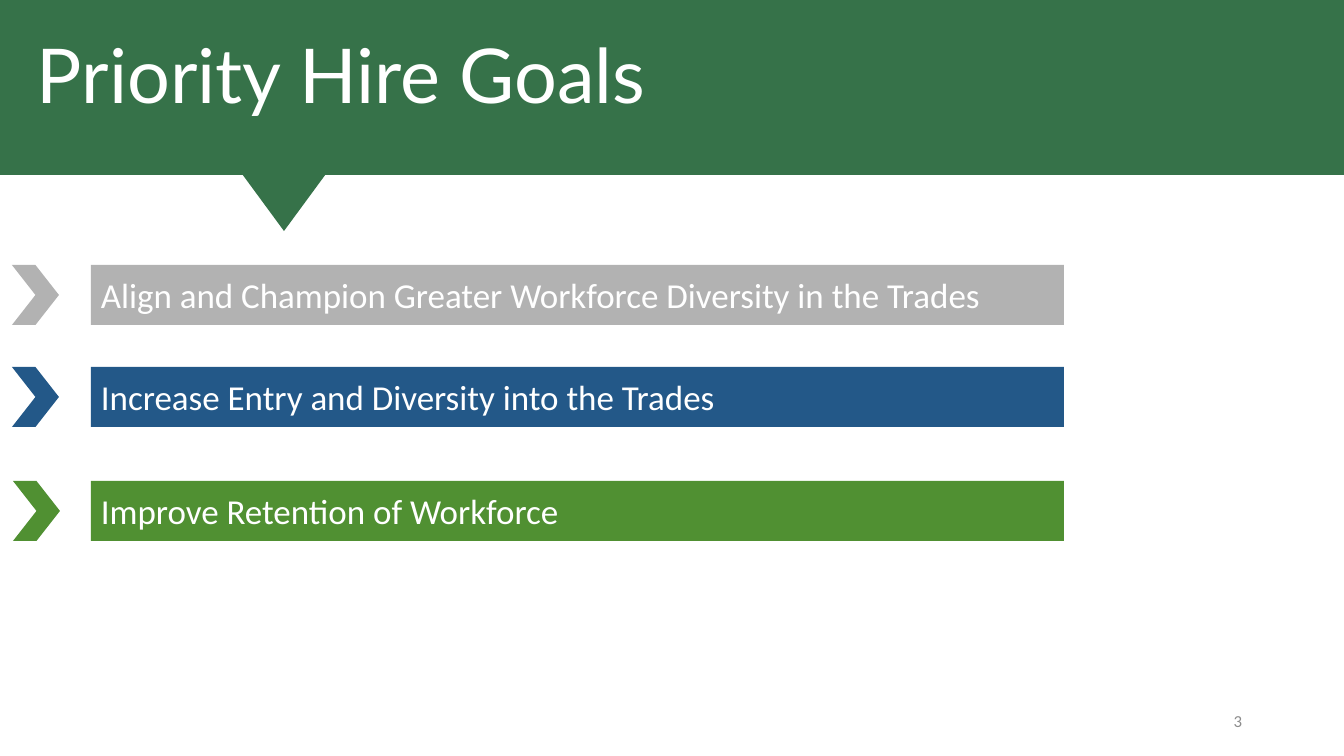
"""Build the Priority Hire Goals slide."""
from dataclasses import dataclass

from pptx import Presentation
from pptx.dml.color import RGBColor
from pptx.enum.shapes import MSO_SHAPE as Geo
from pptx.enum.text import MSO_ANCHOR as Anchor, PP_ALIGN as Align
from pptx.shapes.autoshape import Shape
from pptx.slide import Slide
from pptx.util import Pt

SCALE = 914400 / 100.8
WHITE = RGBColor(0xFF, 0xFF, 0xFF)
GREY = RGBColor(0xB2, 0xB2, 0xB2)
BLUE = RGBColor(0x23, 0x58, 0x88)
GREEN = RGBColor(0x50, 0x90, 0x32)
FOREST = RGBColor(0x36, 0x72, 0x49)
NUMBER_GREY = RGBColor(0x8C, 0x8C, 0x8C)


@dataclass(frozen=True)
class Box:
    left: int
    top: int
    width: int
    height: int

    def emu(self) -> list[int]:
        """Return the box in EMU."""
        return [round(v * SCALE) for v in (self.left, self.top, self.width, self.height)]


@dataclass(frozen=True)
class Style:
    name: str
    size: int
    color: RGBColor
    align: Align = Align.LEFT
    spacing: float = 1.0


@dataclass(frozen=True)
class Goal:
    text: str
    top: int
    color: RGBColor
    chevron_left: int = 12


TITLE = Style("Lato", 54, WHITE, spacing=0.9)
GOAL = Style("Calibri", 25, WHITE)
NUMBER = Style("Calibri", 12, NUMBER_GREY, Align.RIGHT)
GOALS = [
    Goal("Align and Champion Greater Workforce Diversity in the Trades", 265, GREY),
    Goal("Increase Entry and Diversity into the Trades", 367, BLUE),
    Goal("Improve Retention of Workforce", 481, GREEN, 13),
]


def write(s: Shape, text: str, style: Style) -> None:
    """Set one styled line of text in a shape."""
    tf = s.text_frame
    tf.word_wrap = True
    tf.vertical_anchor = Anchor.MIDDLE
    p = tf.paragraphs[0]
    p.alignment = style.align
    p.line_spacing = style.spacing
    r = p.add_run()
    r.text = text
    for key, value in {"name": style.name, "size": Pt(style.size)}.items():
        setattr(r.font, key, value)
    r.font.color.rgb = style.color


def add_text(slide: Slide, box: Box, text: str, style: Style) -> None:
    """Add a text box."""
    write(slide.shapes.add_textbox(*box.emu()), text, style)


def add_block(slide: Slide, geo: Geo, box: Box, color: RGBColor) -> Shape:
    """Add a plain filled shape."""
    s = slide.shapes.add_shape(geo, *box.emu())
    s.shadow.inherit = False
    s.fill.solid()
    s.fill.fore_color.rgb = color
    s.line.fill.background()
    return s


def add_goal(slide: Slide, goal: Goal) -> None:
    """Add a chevron and its labelled bar."""
    add_block(slide, Geo.CHEVRON, Box(goal.chevron_left, goal.top, 47, 60), goal.color)
    bar = add_block(slide, Geo.RECTANGLE, Box(91, goal.top, 973, 60), goal.color)
    write(bar, goal.text, GOAL)


def main() -> None:
    """Build and save the slide."""
    prs = Presentation()
    prs.slide_width, prs.slide_height = Box(0, 0, 1344, 756).emu()[2:]
    slide = prs.slides.add_slide(prs.slide_layouts[6])
    add_text(slide, Box(950, 701, 302, 40), "3", NUMBER)
    add_block(slide, Geo.RECTANGLE, Box(0, 0, 1344, 175), FOREST)
    pointer = add_block(slide, Geo.ISOSCELES_TRIANGLE, Box(223, 148, 122, 83), FOREST)
    pointer.rotation = 180
    add_text(slide, Box(27, 29, 1073, 100), "Priority Hire Goals", TITLE)
    for goal in GOALS:
        add_goal(slide, goal)
    prs.save("out.pptx")


if __name__ == "__main__":
    main()
